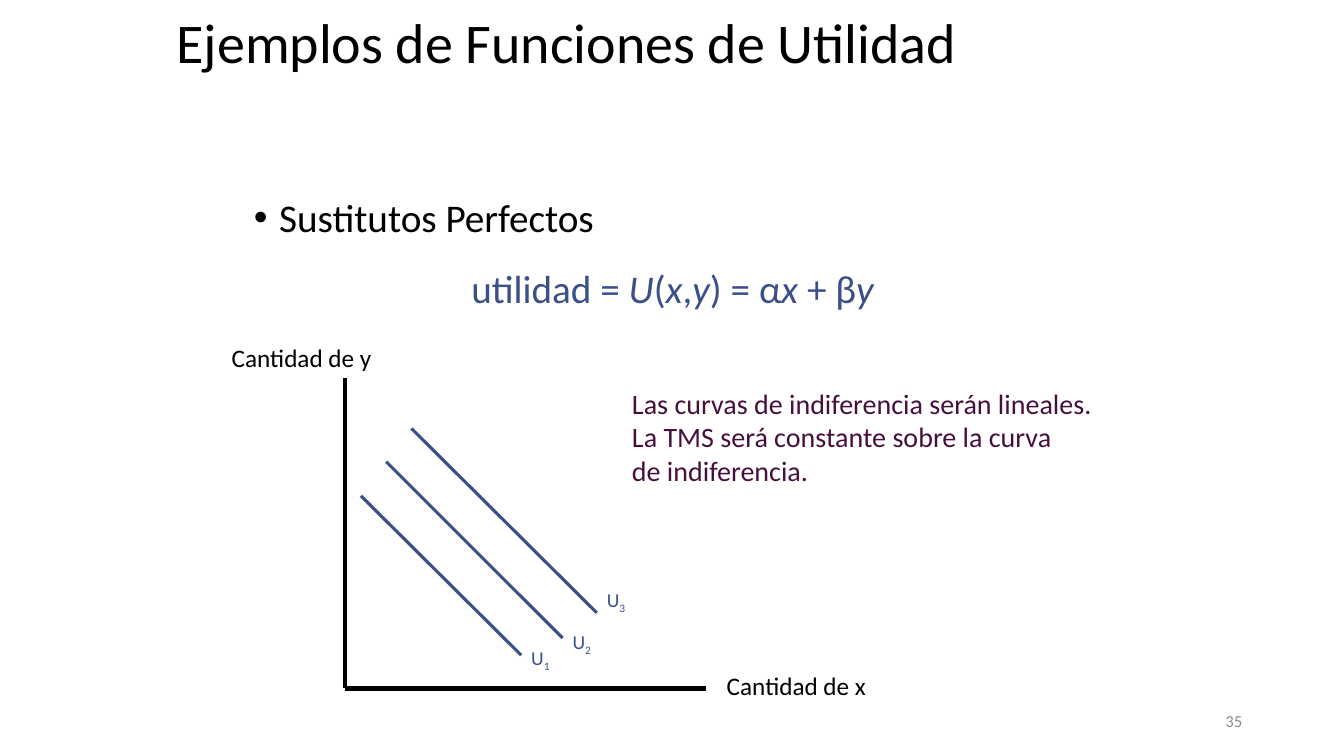
from dataclasses import dataclass

from lxml import etree
from pptx import Presentation
from pptx import util as u
from pptx.dml.color import RGBColor
from pptx.enum import shapes, text
from pptx.oxml.ns import qn

EMU_PER_PX = 9144  # 100 px to the inch
FONT = "Calibri"
BLACK = RGBColor(0x00, 0x00, 0x00)
BLUE = RGBColor(0x3B, 0x4F, 0x89)
PLUM = RGBColor(0x47, 0x0F, 0x3E)
GRAY = RGBColor(0x8C, 0x8C, 0x8C)


@dataclass(frozen=True)
class Line:
    start: tuple[int, int]
    end: tuple[int, int]
    color: RGBColor
    width: float


@dataclass(frozen=True)
class Label:
    left: int
    top: int
    width: int
    height: int
    words: str
    size: int
    color: RGBColor
    subscript: str = ""
    wrap: bool = False
    align: text.PP_ALIGN = text.PP_ALIGN.LEFT


@dataclass(frozen=True)
class Curve:
    start: tuple[int, int]
    end: tuple[int, int]
    label_top: int


AXES = [
    Line((342, 375), (342, 683), BLACK, 3),
    Line((342, 683), (700, 683), BLACK, 3),
]
CURVES = [
    Curve((358, 492), (517, 650), 638),
    Curve((383, 458), (558, 633), 622),
    Curve((408, 425), (592, 608), 580),
]
LABELS = [
    Label(942, 695, 300, 40, "35", 12, GRAY, wrap=True, align=text.PP_ALIGN.RIGHT),
    Label(711, 660, 174, 40, "Cantidad de x", 18, BLACK),
    Label(220, 335, 174, 40, "Cantidad de y", 18, BLACK),
    Label(617, 378, 537, 110,
          "Las curvas de indiferencia serán lineales.\n"
          "La TMS será constante sobre la curva\n"
          "de indiferencia.", 20, PLUM),
]
FORMULA = [("utilidad = ", False), ("U", True), ("(", False), ("x", True), (",", False),
           ("y", True), (") = α", False), ("x", True), (" + β", False), ("y", True)]


def px(length: int) -> u.Emu:
    return u.Emu(length * EMU_PER_PX)


def style(span, size: int, color: RGBColor) -> None:
    span.font.name = FONT
    span.font.size = u.Pt(size)
    span.font.color.rgb = color


def style_frame(frame, size: int, color: RGBColor) -> None:
    for para in frame.paragraphs:
        for span in para.runs:
            style(span, size, color)


def draw_line(page, line: Line) -> None:
    connector = page.shapes.add_connector(
        shapes.MSO_CONNECTOR.STRAIGHT, *map(px, line.start + line.end))
    connector.line.color.rgb = line.color
    connector.line.width = u.Pt(line.width)
    etree.SubElement(connector._element.spPr, qn("a:effectLst"))


def draw_label(page, label: Label) -> None:
    box = page.shapes.add_textbox(
        px(label.left), px(label.top), px(label.width), px(label.height))
    frame = box.text_frame
    frame.text = label.words
    frame.word_wrap = label.wrap
    frame.vertical_anchor = text.MSO_ANCHOR.MIDDLE
    if label.subscript:
        span = frame.paragraphs[0].add_run()
        span.text = label.subscript
        span.font._element.set("baseline", "-25000")
    for para in frame.paragraphs:
        para.alignment = label.align
    style_frame(frame, label.size, label.color)


def draw_curve(page, number: int, curve: Curve) -> None:
    draw_line(page, Line(curve.start, curve.end, BLUE, 2.25))
    draw_label(page, Label(curve.end[0], curve.label_top, 58, 33,
                           "U", 14, BLUE, subscript=str(number), wrap=True))


def format_title(title) -> None:
    title.left, title.top, title.width, title.height = map(px, (165, 8, 1000, 75))
    frame = title.text_frame
    frame.text = "Ejemplos de Funciones de Utilidad"
    frame.auto_size = text.MSO_AUTO_SIZE.NONE
    frame.vertical_anchor = text.MSO_ANCHOR.MIDDLE
    frame.paragraphs[0].alignment = text.PP_ALIGN.LEFT
    frame.paragraphs[0].line_spacing = 0.9
    style_frame(frame, 40, BLACK)


def draw_definition(page) -> None:
    """Add the bulleted heading and the centred utility formula."""
    box = page.shapes.add_textbox(px(242), px(192), px(850), px(125))
    frame = box.text_frame
    frame.word_wrap = True
    heading = frame.paragraphs[0]
    heading.text = "Sustitutos Perfectos"
    heading.line_spacing = 0.9
    formula = frame.add_paragraph()
    formula.alignment = text.PP_ALIGN.CENTER
    formula.line_spacing = 1.2
    for words, italic in FORMULA:
        span = formula.add_run()
        span.text = words
        span.font.italic = italic
        style(span, 28, BLUE)
    for span in heading.runs:
        style(span, 28, BLACK)
    for para in (heading, formula):
        para.space_before = u.Pt(10)
        properties = para._p.get_or_add_pPr()
        properties.set("marL", str(px(25)))
        properties.set("indent", str(px(-25)))
    properties = heading._p.get_or_add_pPr()
    etree.SubElement(properties, qn("a:buFont"), typeface="Arial")
    etree.SubElement(properties, qn("a:buChar"), char="•")


def main() -> None:
    deck = Presentation()
    deck.slide_width, deck.slide_height = px(1333), px(750)
    page = deck.slides.add_slide(deck.slide_layouts.get_by_name("Title Only"))
    format_title(page.shapes.title)
    draw_definition(page)
    for axis in AXES:
        draw_line(page, axis)
    for number, curve in enumerate(CURVES, start=1):
        draw_curve(page, number, curve)
    for label in LABELS:
        draw_label(page, label)
    deck.save("out.pptx")


if __name__ == "__main__":
    main()
